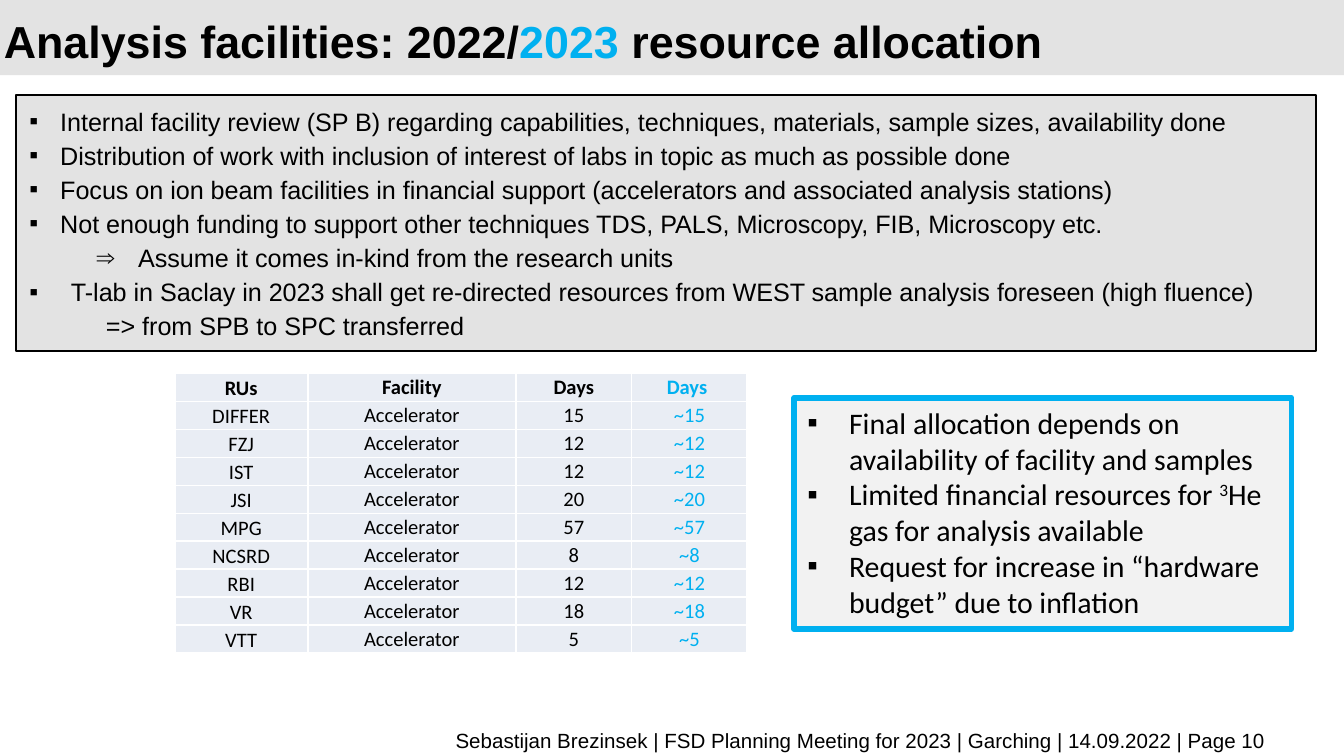
from lxml import etree
from pptx import Presentation
from pptx.dml.color import RGBColor
from pptx.enum import shapes, text
from pptx.oxml.ns import qn
from pptx.util import Inches, Pt

BLACK, BLUE, WHITE = "000000", "00B0F0", "FFFFFF"
GREY, LIGHT, CELL = "E3E3E3", "F2F2F2", "E9EDF4"
WIDTH = 10
HEIGHT = WIDTH * 9 / 16

# A run is (text, format overrides); a paragraph is (runs, bullet, left, hanging).
TITLE = [("Analysis facilities: 2022/", {}), ("2023 ", {"color": BLUE}),
         ("resource allocation", {})]
REVIEW = [
    ([("Internal facility review (SP B) regarding capabilities, techniques, "
       "materials, sample sizes, availability done", {})], "▪", 0.23, 0.23),
    ([("Distribution of work with inclusion of interest of labs in topic "
       "as much as possible done", {})], "▪", 0.23, 0.23),
    ([("Focus on ion beam facilities in financial support "
       "(accelerators and associated analysis stations)", {})], "▪", 0.23, 0.23),
    ([("Not enough funding to support other techniques TDS, PALS, "
       "Microscopy, FIB, Microscopy etc.", {})], "▪", 0.23, 0.23),
    ([("Assume it comes in-kind from the research units", {})], "⇒", 0.81, 0.31),
    ([("T-lab in Saclay in 2023 shall get re-directed resources from WEST "
       "sample analysis foreseen (high fluence)", {})], "▪", 0.31, 0.31),
    ([("=> from SPB to SPC transferred", {})], None, 0.57, 0),
]
LIMITS = [
    ([("Final allocation depends on availability of facility and samples", {})],
     "▪", 0.31, 0.31),
    ([("Limited financial resources for ", {}), ("3", {"raised": True}),
      ("He gas for analysis available", {})], "▪", 0.31, 0.31),
    ([("Request for increase in “hardware budget” due to inflation", {})],
     "▪", 0.31, 0.31),
]
FOOTER = [("Sebastijan Brezinsek | FSD Planning Meeting for 2023 | Garching "
           "| 14.09.2022 | Page 10", {})]
HEADER = ("RUs", "Facility", "Days", "Days ")
DAYS = {"DIFFER": 15, "FZJ": 12, "IST": 12, "JSI": 20, "MPG": 57,
        "NCSRD": 8, "RBI": 12, "VR": 18, "VTT": 5}
COLUMNS = (0.99, 1.55, 0.86, 0.86)
TABLE_HEIGHT = 2.08


def rgb(value):
    return RGBColor.from_string(value)


def add_runs(p, runs, color=BLACK, **fmt):
    for words, extra in runs:
        r = p.add_run()
        r.text = words
        for name, value in fmt.items():
            setattr(r.font, name, value)
        r.font.color.rgb = rgb(extra.get("color", color))
        if extra.get("raised"):
            r.font._element.set("baseline", "30000")


def set_bullet(p, char, left, hanging):
    pPr = p._p.get_or_add_pPr()
    pPr.set("marL", str(Inches(left)))
    pPr.set("indent", str(-Inches(hanging)))
    if char:
        etree.SubElement(pPr, qn("a:buFont")).set("typeface", "Arial")
        etree.SubElement(pPr, qn("a:buChar")).set("char", char)


def add_rect(s, box, fill, line=None, width=1):
    sp = s.shapes.add_shape(shapes.MSO_SHAPE.RECTANGLE, *map(Inches, box))
    sp.shadow.inherit = False
    sp.fill.solid()
    sp.fill.fore_color.rgb = rgb(fill)
    if line:
        sp.line.color.rgb = rgb(line)
        sp.line.width = Pt(width)
    else:
        sp.line.fill.background()
    return sp


def add_list(sp, paragraphs, spacing, **fmt):
    tf = sp.text_frame
    tf.word_wrap = True
    tf.vertical_anchor = text.MSO_ANCHOR.TOP
    for i, (runs, char, left, hanging) in enumerate(paragraphs):
        p = tf.add_paragraph() if i else tf.paragraphs[0]
        p.alignment = text.PP_ALIGN.LEFT
        p.line_spacing = spacing
        set_bullet(p, char, left, hanging)
        add_runs(p, runs, **fmt)


def add_line(s, box, runs, align, anchor, spacing=None, **fmt):
    """Add a text box that holds one paragraph."""
    tf = s.shapes.add_textbox(*map(Inches, box)).text_frame
    tf.word_wrap = True
    tf.vertical_anchor = anchor
    p = tf.paragraphs[0]
    p.alignment = align
    p.line_spacing = spacing
    add_runs(p, runs, **fmt)


def set_borders(cell, color, width):
    tcPr = cell._tc.get_or_add_tcPr()
    for i, side in enumerate(("lnL", "lnR", "lnT", "lnB")):
        ln = etree.Element(qn(f"a:{side}"), w=str(Pt(width)))
        fill = etree.SubElement(ln, qn("a:solidFill"))
        etree.SubElement(fill, qn("a:srgbClr")).set("val", color)
        tcPr.insert(i, ln)


def add_days_table(s, left, top):
    rows = [HEADER] + [(unit, "Accelerator", str(n), f"~{n}")
                       for unit, n in DAYS.items()]
    table = s.shapes.add_table(len(rows), len(COLUMNS), Inches(left), Inches(top),
                               Inches(sum(COLUMNS)), Inches(TABLE_HEIGHT)).table
    for column, width in zip(table.columns, COLUMNS):
        column.width = Inches(width)
    for i, row in enumerate(rows):
        for j, words in enumerate(row):
            cell = table.cell(i, j)
            cell.fill.solid()
            cell.fill.fore_color.rgb = rgb(CELL)
            for side in ("left", "right", "top", "bottom"):
                setattr(cell, f"margin_{side}", 0)
            cell.vertical_anchor = (text.MSO_ANCHOR.MIDDLE if j
                                    else text.MSO_ANCHOR.BOTTOM)
            set_borders(cell, WHITE, 1)
            p = cell.text_frame.paragraphs[0]
            p.alignment = text.PP_ALIGN.CENTER
            add_runs(p, [(words, {})], color=BLUE if j == 3 else BLACK,
                     name="Calibri", size=Pt(11), bold=i == 0)


def main():
    prs = Presentation()
    prs.slide_width, prs.slide_height = Inches(WIDTH), Inches(HEIGHT)
    s = prs.slides.add_slide(prs.slide_layouts[6])

    add_rect(s, (0, 0, WIDTH, 0.56), GREY)
    add_line(s, (-0.07, 0.09, 8.77, 0.38), TITLE, text.PP_ALIGN.LEFT,
             text.MSO_ANCHOR.MIDDLE, Pt(32), name="Arial", size=Pt(24), bold=True)
    review = add_rect(s, (0.12, 0.71, 9.67, 1.9), GREY, BLACK, 1)
    add_list(review, REVIEW, 1.13, name="Arial", size=Pt(13.5))
    add_days_table(s, 1.3, 2.78)
    limits = add_rect(s, (5.91, 2.96, 3.7, 1.72), LIGHT, BLUE, 3)
    add_list(limits, LIMITS, 1.0, name="Calibri", size=Pt(16))
    add_line(s, (0.51, 5.37, 9.01, 0.22), FOOTER, text.PP_ALIGN.RIGHT,
             text.MSO_ANCHOR.TOP, name="Arial", size=Pt(11))

    prs.save("out.pptx")


if __name__ == "__main__":
    main()
